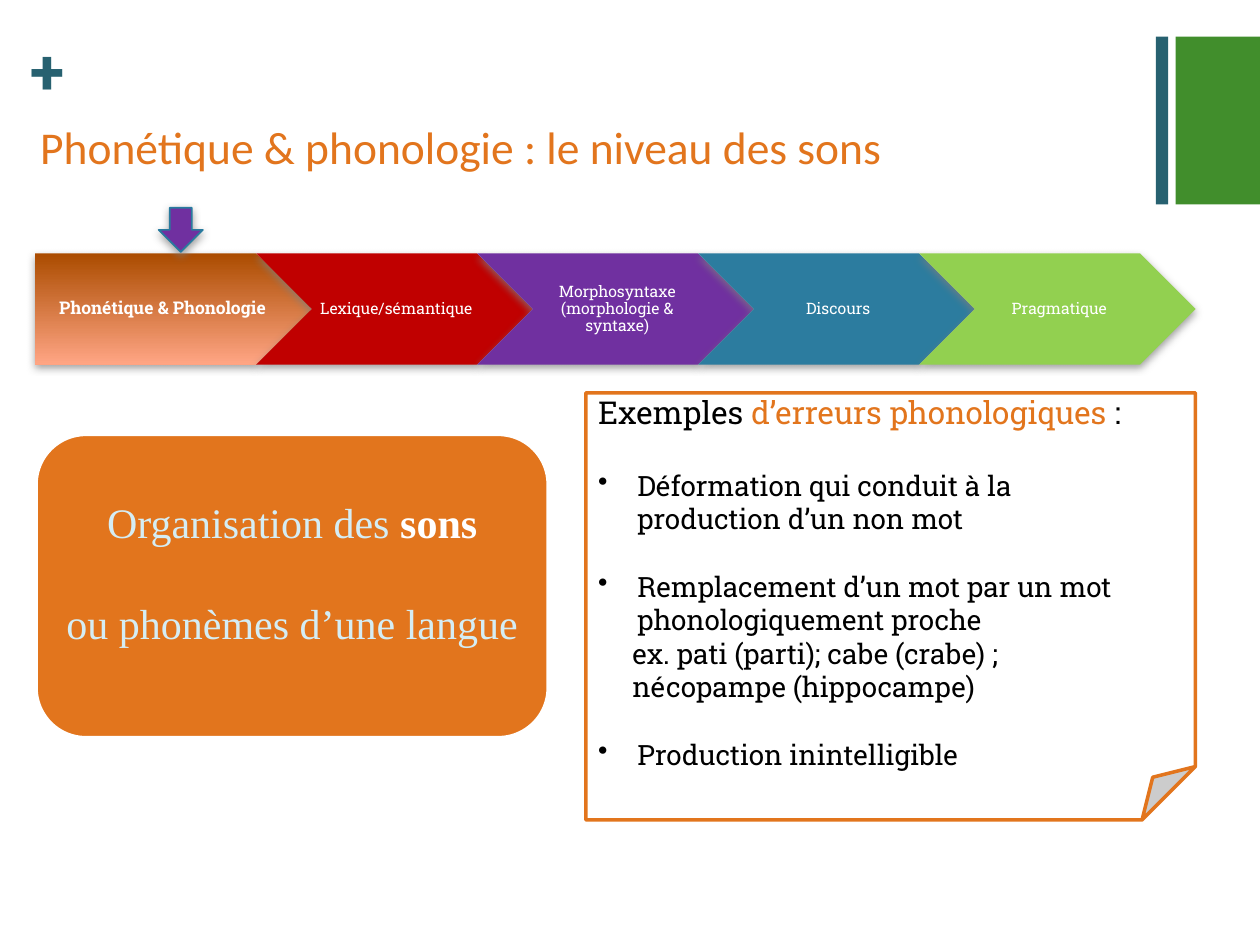
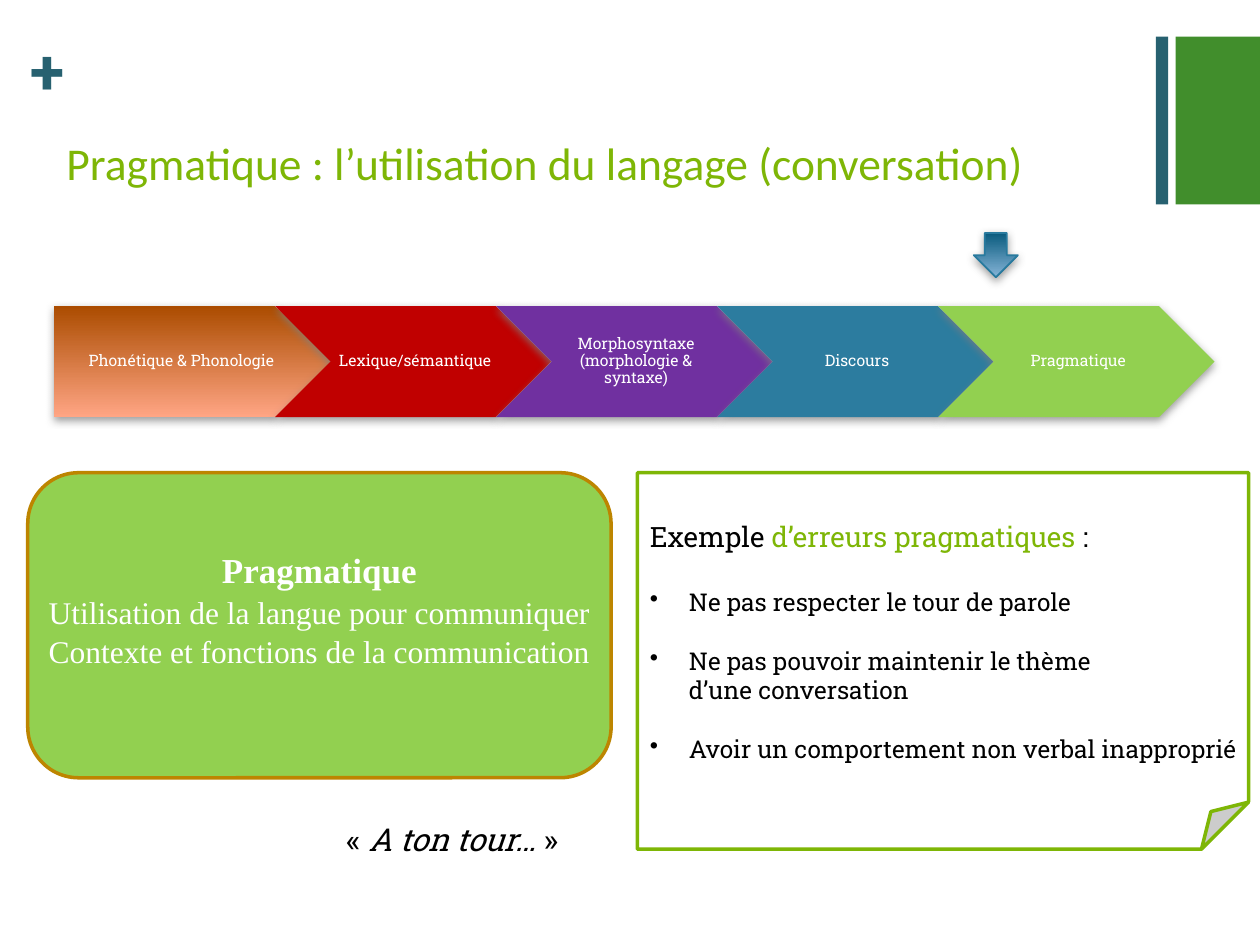
"""Build two slides on the levels of language: phonology and pragmatics."""
from lxml import etree
from pptx import Presentation
from pptx.dml.color import RGBColor
from pptx.enum.shapes import MSO_SHAPE
from pptx.enum.text import MSO_ANCHOR, PP_ALIGN
from pptx.oxml.ns import qn
from pptx.util import Cm, Pt

RECTANGLE = MSO_SHAPE.RECTANGLE
ROUNDED = MSO_SHAPE.ROUNDED_RECTANGLE
FOLDED = MSO_SHAPE.FOLDED_CORNER
PENTAGON = MSO_SHAPE.PENTAGON
CHEVRON = MSO_SHAPE.CHEVRON
DOWN_ARROW = MSO_SHAPE.DOWN_ARROW
TOP, MIDDLE = MSO_ANCHOR.TOP, MSO_ANCHOR.MIDDLE
LEFT, CENTER = PP_ALIGN.LEFT, PP_ALIGN.CENTER

COLORS = {
    "white": "FFFFFF", "black": "000000", "green": "418E2C", "teal": "276170",
    "orange": "E2751D", "lime": "7EB606", "light_green": "92D050", "gold": "BD8500",
    "pale_blue": "D5EDF4", "red": "C00000", "purple": "7030A0", "blue": "2C7C9F",
    "arrow_line": "287A9E", "shadow": "808080", "rust": "AB4C00", "salmon": "FFA584",
    "deep_blue": "0A5B7E", "sky": "85B4D7",
}
SLAB, SERIF, SANS = "Roboto Slab", "Times New Roman", "Calibri"
LEVELS = [
    ("Phonétique & Phonologie", ("rust", "salmon")),
    ("Lexique/sémantique", "red"),
    ("Morphosyntaxe (morphologie & syntaxe)", "purple"),
    ("Discours", "blue"),
    ("Pragmatique", "light_green"),
]
LEVEL_WIDTH, LEVEL_HEIGHT = 5.57, 2.24
LEVEL_STEP = LEVEL_WIDTH * 0.8
BULLET_INDENT = 0.79
EXAMPLE_INDENT = 0.69


def rgb(name):
    """Return the named colour."""
    return RGBColor.from_string(COLORS[name])


def apply_format(target, values):
    """Set each attribute of the target from a dict."""
    for name, value in values.items():
        setattr(target, name, value)


def set_margins(frame, left, top, right, bottom):
    """Set the four inner margins in centimetres."""
    apply_format(frame, {
        "margin_left": Cm(left), "margin_top": Cm(top),
        "margin_right": Cm(right), "margin_bottom": Cm(bottom),
    })


def set_fill(shape, fill):
    """Fill with one colour, or top to bottom with a pair of colours."""
    if isinstance(fill, str):
        shape.fill.solid()
        shape.fill.fore_color.rgb = rgb(fill)
        return
    shape.fill.gradient()
    shape.fill.gradient_angle = 270
    for stop, position, name in zip(shape.fill.gradient_stops, (0, 1), fill):
        stop.position = position
        stop.color.rgb = rgb(name)


def add_shadow(shape):
    """Add a soft grey shadow below the shape."""
    effects = shape._element.spPr.find(qn("a:effectLst"))
    shadow = etree.SubElement(effects, qn("a:outerShdw"), blurRad=str(Pt(5)),
                              dist=str(Pt(2)), dir="5400000", rotWithShape="0")
    color = etree.SubElement(shadow, qn("a:srgbClr"), val=COLORS["shadow"])
    etree.SubElement(color, qn("a:alpha"), val="75000")


def set_fold(shape, share):
    """Set the size of the folded corner as a share of the short side."""
    geometry = shape._element.spPr.find(qn("a:prstGeom"))
    guides = geometry.find(qn("a:avLst"))
    if guides is None:
        guides = etree.SubElement(geometry, qn("a:avLst"))
    etree.SubElement(guides, qn("a:gd"), name="adj", fmla=f"val {round(share * 100000)}")


def add_block(slide, kind, box, fill, line=None, line_width=1, shadow=False):
    """Add a preset shape at a box given in centimetres."""
    shape = slide.shapes.add_shape(kind, *map(Cm, box))
    shape.shadow.inherit = False
    set_fill(shape, fill)
    if line:
        shape.line.color.rgb = rgb(line)
        shape.line.width = Pt(line_width)
    else:
        shape.line.fill.background()
    if shadow:
        add_shadow(shape)
    return shape


def add_run(paragraph, text, size, font, color, **extra):
    """Add a run; a line feed in the text becomes a line break."""
    for index, part in enumerate(text.split("\n")):
        if index:
            paragraph.add_line_break()
        run = paragraph.add_run()
        run.text = part
        run.font.color.rgb = rgb(color)
        apply_format(run.font, {"size": Pt(size), "name": font, **extra})


def set_indent(paragraph, indent, bullet=False):
    """Indent a paragraph, with a hanging bullet on request."""
    properties = paragraph._p.get_or_add_pPr()
    properties.set("marL", str(Cm(indent)))
    properties.set("indent", str(-Cm(indent) if bullet else 0))
    if bullet:
        etree.SubElement(properties, qn("a:buChar"), char="•")


def next_paragraph(frame, **values):
    """Return the first paragraph if still empty, else a new one."""
    first = frame.paragraphs[0]
    paragraph = frame.add_paragraph() if first.runs else first
    apply_format(paragraph, values)
    return paragraph


def add_text(slide, box, margins=(0.25, 0.13, 0.25, 0.13)):
    """Add a wrapping text box and return its first paragraph."""
    frame = slide.shapes.add_textbox(*map(Cm, box)).text_frame
    frame.word_wrap = True
    set_margins(frame, *margins)
    return frame.paragraphs[0]


def add_decor(slide):
    """Add the corner bands and the plus sign."""
    add_block(slide, RECTANGLE, (23.7, 0.74, 1.7, 3.38), "green")
    plus = add_text(slide, (0.61, 0.64, 0.74, 1.55), (0, 0, 0, 0))
    add_run(plus, "+", 36, SLAB, "teal", bold=True)
    add_block(slide, RECTANGLE, (23.3, 0.74, 0.25, 3.38), "teal")


def add_title(slide, left, top, text, color):
    """Add the slide title."""
    paragraph = add_text(slide, (left, top, 22.6, 1.5))
    paragraph.line_spacing = Pt(30)
    add_run(paragraph, text, 26, SANS, color)


def add_levels(slide, left, top, active=None):
    """Add the chain of language levels, the active one in bold."""
    for index, (label, fill) in enumerate(LEVELS):
        box = (left + index * LEVEL_STEP, top, LEVEL_WIDTH, LEVEL_HEIGHT)
        shape = add_block(slide, CHEVRON if index else PENTAGON, box, fill, shadow=True)
        frame = shape.text_frame
        apply_format(frame, {"word_wrap": True, "vertical_anchor": MIDDLE})
        set_margins(frame, 0.1 if index else 0.15, 0.08, 0.03, 0.08)
        paragraph = next_paragraph(frame, alignment=CENTER, line_spacing=0.9)
        is_active = index == active
        add_run(paragraph, label, 10 if is_active else 9, SLAB, "white", bold=is_active)


def add_pointer(slide, left, top, fill):
    """Add the arrow above the chain of levels."""
    add_block(slide, DOWN_ARROW, (left, top, 0.89, 0.89), fill, "arrow_line", 1, True)


def add_definition(slide, box, fill, line, line_width, lift, gap, lines):
    """Add the rounded definition panel; each line is a list of runs."""
    shape = add_block(slide, ROUNDED, box, fill, line, line_width)
    frame = shape.text_frame
    apply_format(frame, {"word_wrap": True, "vertical_anchor": MIDDLE})
    set_margins(frame, 0, 0, 0, lift)
    for index, runs in enumerate(lines):
        paragraph = next_paragraph(frame, alignment=CENTER)
        if index:
            paragraph.space_before = Pt(gap)
        for text, size, color, bold in runs:
            add_run(paragraph, text, size, SERIF, color, bold=bold)


def add_examples(slide, box, color, top_margin, heading, sizes, gaps, items):
    """Add the folded note: a heading, then bullets with optional examples."""
    shape = add_block(slide, FOLDED, box, "white", color, 2)
    set_fold(shape, 0.125)
    frame = shape.text_frame
    apply_format(frame, {"word_wrap": True, "vertical_anchor": TOP})
    set_margins(frame, 0.25, top_margin, 0, 0)
    heading_size, item_size = sizes
    paragraph = next_paragraph(frame, alignment=LEFT)
    for text, text_color in zip(heading, ("black", color, "black")):
        add_run(paragraph, text, heading_size, SLAB, text_color)
    for index, (item, example) in enumerate(items):
        gap = gaps[1] if index else gaps[0]
        paragraph = next_paragraph(frame, alignment=LEFT, space_before=Pt(gap))
        set_indent(paragraph, BULLET_INDENT, bullet=True)
        add_run(paragraph, item, item_size, SLAB, "black")
        if example:
            paragraph = next_paragraph(frame, alignment=LEFT)
            set_indent(paragraph, EXAMPLE_INDENT)
            add_run(paragraph, example, item_size, SLAB, "black")


def build_phonology(slide):
    """Fill the slide about sounds."""
    add_decor(slide)
    add_title(slide, 0.56, 2.31, "Phonétique & phonologie : le niveau des sons", "orange")
    add_definition(slide, (0.71, 8.74, 10.36, 6.15), "orange", "white", 3, 0.56, 29, [
        [("Organisation des ", 24, "pale_blue", False), ("sons", 24, "white", True)],
        [("ou phonèmes d’une langue", 24, "pale_blue", False)],
    ])
    add_examples(
        slide, (11.81, 7.92, 12.29, 8.61), "orange", 0,
        ("Exemples ", "d’erreurs phonologiques ", ":"), (18, 16), (21.6, 19.2), [
            ("Déformation qui conduit à la\nproduction d’un non mot", None),
            ("Remplacement d’un mot par un mot\nphonologiquement proche",
             "ex. pati (parti); cabe (crabe) ;\nnécopampe (hippocampe)"),
            ("Production inintelligible", None),
        ])
    add_levels(slide, 0.71, 5.11, active=0)
    add_pointer(slide, 3.2, 4.19, "purple")


def build_pragmatics(slide):
    """Fill the slide about language use."""
    add_decor(slide)
    add_title(slide, 1.09, 2.64, "Pragmatique : l’utilisation du langage (conversation)", "lime")
    add_definition(slide, (0.56, 9.53, 11.76, 6.15), "light_green", "gold", 2, 0.64, 1, [
        [("Pragmatique", 20, "white", True)],
        [("Utilisation de la langue pour communiquer", 18, "white", False)],
        [("Contexte et fonctions de la communication", 18, "white", False)],
    ])
    add_examples(
        slide, (12.85, 9.53, 12.32, 7.59), "lime", 0.95,
        ("Exemple ", "d’erreurs pragmatiques ", ":"), (16, 14), (19.2, 16.8), [
            ("Ne pas respecter le tour de parole", None),
            ("Ne pas pouvoir maintenir le thème\nd’une conversation", None),
            ("Avoir un comportement non verbal inapproprié", None),
        ])
    add_pointer(slide, 19.63, 4.7, ("deep_blue", "sky"))
    add_levels(slide, 1.09, 6.17)
    quote = add_text(slide, (6.73, 16.41, 5.13, 1.02))
    for text, italic in (("« ", False), ("A ton tour… ", True), ("»", False)):
        add_run(quote, text, 18, SLAB, "black", italic=italic)


def main():
    """Create and save the presentation."""
    presentation = Presentation()
    apply_format(presentation, {"slide_width": Cm(25.4), "slide_height": Cm(19.05)})
    blank = presentation.slide_layouts[6]
    for build in (build_phonology, build_pragmatics):
        build(presentation.slides.add_slide(blank))
    presentation.save("out.pptx")


if __name__ == "__main__":
    main()
